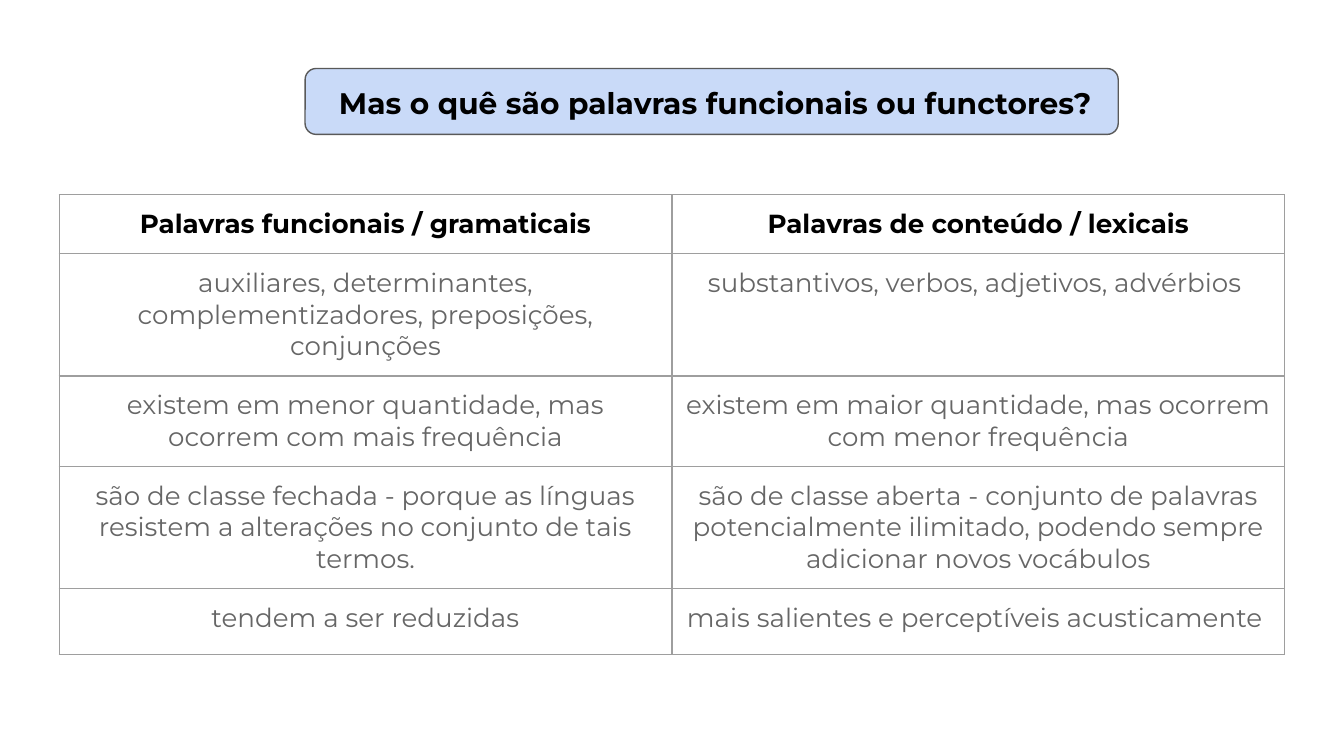
import pptx
import pptx.dml.color
import pptx.enum.shapes
import pptx.enum.text
import pptx.oxml.ns
import pptx.util
from lxml import etree

Inches = pptx.util.Inches
Pt = pptx.util.Pt
CENTER = pptx.enum.text.PP_ALIGN.CENTER

FONT = "Montserrat"
COLORS = {
    "heading": "000000",
    "body": "666666",
    "banner": "C9DAF8",
    "banner_line": "595959",
    "border": "9E9E9E",
}

QUESTION = "Mas o quê são palavras funcionais ou functores?"
COMPARISON = [
    ("Palavras funcionais / gramaticais", "Palavras de conteúdo / lexicais"),
    ("auxiliares, determinantes, complementizadores, preposições, conjunções",
     "substantivos, verbos, adjetivos, advérbios "),
    ("existem em menor quantidade, mas ocorrem com mais frequência",
     "existem em maior quantidade, mas ocorrem com menor frequência"),
    ("são de classe fechada - porque as línguas resistem a alterações "
     "no conjunto de tais termos.",
     "são de classe aberta - conjunto de palavras potencialmente ilimitado, "
     "podendo sempre adicionar novos vocábulos"),
    ("tendem a ser reduzidas", "mais salientes e perceptíveis acusticamente "),
]
# Minimum heights: rows grow to fit their text
ROW_HEIGHTS = [0.39, 0.81, 0.6, 0.83, 0.49]
COLUMN_WIDTH = 4.56
MARGIN = 0.1


def rgb(name):
    return pptx.dml.color.RGBColor.from_string(COLORS[name])


def style(paragraph, size, color, bold):
    paragraph.alignment = CENTER
    paragraph.font.name = FONT
    paragraph.font.size = Pt(size)
    paragraph.font.bold = bold
    paragraph.font.color.rgb = rgb(color)


def set_margins(holder):
    """Apply the common inset to a text frame or a table cell."""
    holder.margin_left = holder.margin_right = Inches(MARGIN)
    holder.margin_top = holder.margin_bottom = Inches(MARGIN)


def add_borders(cell):
    properties = cell._tc.get_or_add_tcPr()
    qn = pptx.oxml.ns.qn
    for position, side in enumerate(("a:lnL", "a:lnR", "a:lnT", "a:lnB")):
        line = etree.Element(qn(side), w=str(Pt(0.75)))
        fill = etree.SubElement(line, qn("a:solidFill"))
        etree.SubElement(fill, qn("a:srgbClr"), val=COLORS["border"])
        properties.insert(position, line)


def add_banner(slide):
    banner = slide.shapes.add_shape(
        pptx.enum.shapes.MSO_SHAPE.ROUNDED_RECTANGLE,
        Inches(2.27), Inches(0.51), Inches(6.05), Inches(0.49))
    banner.shadow.inherit = False
    banner.fill.solid()
    banner.fill.fore_color.rgb = rgb("banner")
    banner.line.color.rgb = rgb("banner_line")
    banner.line.width = Pt(0.75)

    title = slide.shapes.title
    title.left, title.top = Inches(2.33), Inches(0.51)
    title.width, title.height = Inches(5.99), Inches(0.49)
    frame = title.text_frame
    frame.text = QUESTION
    frame.auto_size = pptx.enum.text.MSO_AUTO_SIZE.NONE
    frame.vertical_anchor = pptx.enum.text.MSO_ANCHOR.BOTTOM
    set_margins(frame)
    style(frame.paragraphs[0], 15.9, "heading", True)
    # The title sits in front of its banner
    banner._element.addnext(title._element)


def add_comparison(slide):
    columns = len(COMPARISON[0])
    table = slide.shapes.add_table(
        len(COMPARISON), columns, Inches(0.44), Inches(1.45),
        Inches(COLUMN_WIDTH * columns), Inches(sum(ROW_HEIGHTS))).table
    table.horz_banding = False
    for column in table.columns:
        column.width = Inches(COLUMN_WIDTH)
    for r, (texts, height) in enumerate(zip(COMPARISON, ROW_HEIGHTS)):
        table.rows[r].height = Inches(height)
        is_header = r == 0
        for c, text in enumerate(texts):
            cell = table.cell(r, c)
            cell.text = text
            cell.fill.background()
            set_margins(cell)
            add_borders(cell)
            style(cell.text_frame.paragraphs[0], 14,
                  "heading" if is_header else "body", is_header)


def main():
    deck = pptx.Presentation()
    deck.slide_width = Inches(10)
    deck.slide_height = deck.slide_width * 9 // 16
    slide = deck.slides.add_slide(deck.slide_layouts.get_by_name("Title Only"))
    add_banner(slide)
    add_comparison(slide)
    deck.save("out.pptx")


if __name__ == "__main__":
    main()
